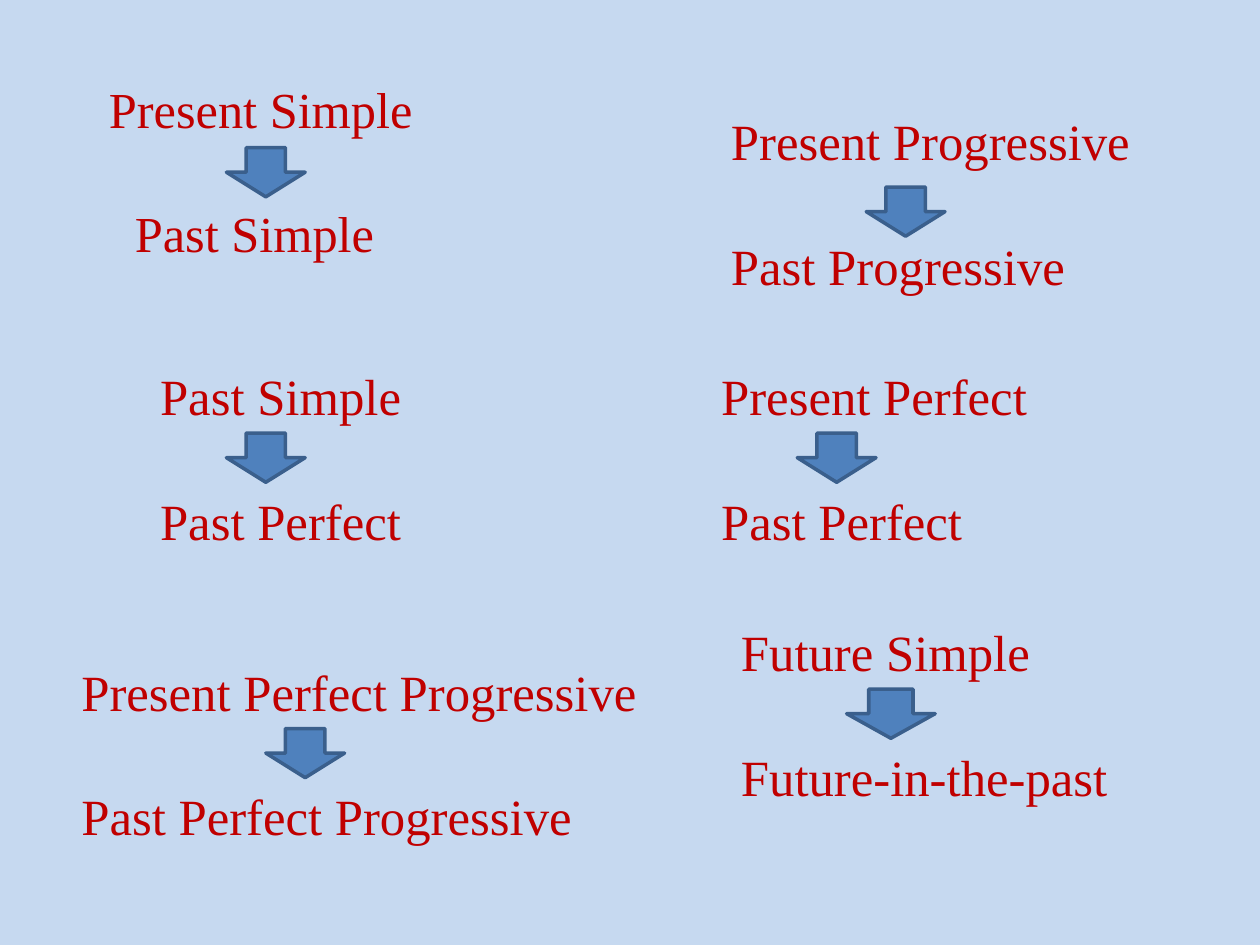
"""Build a slide that pairs each tense with its backshifted form."""
from dataclasses import dataclass

from pptx import Presentation
from pptx.dml.color import RGBColor
from pptx.enum.shapes import MSO_SHAPE
from pptx.enum.text import MSO_ANCHOR, MSO_AUTO_SIZE, PP_ALIGN
from pptx.shapes.base import BaseShape
from pptx.slide import Slide
from pptx.text.text import TextFrame
from pptx.util import Pt

DOWN_ARROW = MSO_SHAPE.DOWN_ARROW
TOP = MSO_ANCHOR.TOP
NO_AUTOFIT = MSO_AUTO_SIZE.NONE
GROW = MSO_AUTO_SIZE.SHAPE_TO_FIT_TEXT
CENTER = PP_ALIGN.CENTER
LEFT = PP_ALIGN.LEFT

BACKGROUND = RGBColor(0xC6, 0xD9, 0xF0)
TEXT_RED = RGBColor(0xC0, 0x00, 0x00)
ARROW_FILL = RGBColor(0x4F, 0x81, 0xBD)
ARROW_LINE = RGBColor(0x3A, 0x5F, 0x8C)
FONT_NAME = "Times New Roman"
PAIR_HEIGHT = 113
PAIR_GAP = 36.4
ARROW_HEIGHT = 28.1


@dataclass(frozen=True)
class TensePair:
    source: str
    result: str
    left: float
    top: float
    width: float


@dataclass(frozen=True)
class Arrow:
    left: float
    top: float
    width: float = 45


TITLE_PAIR = TensePair("Present Simple", "Past Simple ", 0, 44.6, 298.1)
PAIRS = (
    TensePair("Present Progressive", "Past Progressive", 410.6, 56.9, 286.6),
    TensePair("Past Simple", "Past Perfect", 84.4, 202.5, 230.4),
    TensePair("Present Perfect", "Past Perfect", 405, 202.5, 298.1),
    TensePair("Present Perfect Progressive", "Past Perfect Progressive",
              39.4, 371.3, 343.4),
    TensePair("Future Simple", "Future-in-the-past", 416.3, 348.8, 303.8),
)
ARROWS = (
    Arrow(129.4, 84.4),
    Arrow(495, 106.9),
    Arrow(129.4, 247.5),
    Arrow(455.6, 247.5),
    Arrow(151.9, 416.3),
    Arrow(483.8, 393.8, 50.6),
)


def place(shape: BaseShape, pair: TensePair, height: float) -> None:
    shape.left, shape.top = Pt(pair.left), Pt(pair.top)
    shape.width, shape.height = Pt(pair.width), Pt(height)


def write_pair(frame: TextFrame, pair: TensePair, size: float,
               alignment: PP_ALIGN) -> None:
    frame.word_wrap = True
    frame.vertical_anchor = TOP
    for index, text in enumerate((pair.source, pair.result)):
        paragraph = frame.add_paragraph() if index else frame.paragraphs[0]
        paragraph.alignment = alignment
        paragraph.space_before = Pt(PAIR_GAP * index)
        run = paragraph.add_run()
        run.text = text
        run.font.name = FONT_NAME
        run.font.size = Pt(size)
        run.font.color.rgb = TEXT_RED


def fill_title(slide: Slide, pair: TensePair) -> None:
    title = slide.shapes.title
    place(title, pair, 95.8)
    frame = title.text_frame
    frame.auto_size = NO_AUTOFIT
    frame.margin_top = frame.margin_bottom = 0
    write_pair(frame, pair, 28.8, CENTER)


def add_pair(slide: Slide, pair: TensePair) -> None:
    box = slide.shapes.add_textbox(Pt(pair.left), Pt(pair.top),
                                   Pt(pair.width), Pt(PAIR_HEIGHT))
    frame = box.text_frame
    frame.auto_size = GROW
    frame.margin_top = Pt(6)
    write_pair(frame, pair, 29, LEFT)


def add_arrow(slide: Slide, arrow: Arrow) -> None:
    shape = slide.shapes.add_shape(DOWN_ARROW, Pt(arrow.left), Pt(arrow.top),
                                   Pt(arrow.width), Pt(ARROW_HEIGHT))
    shape.shadow.inherit = False
    shape.fill.solid()
    shape.fill.fore_color.rgb = ARROW_FILL
    shape.line.color.rgb = ARROW_LINE
    shape.line.width = Pt(2)


def main() -> None:
    presentation = Presentation()
    presentation.slide_width, presentation.slide_height = Pt(720), Pt(540)
    slide = presentation.slides.add_slide(presentation.slide_layouts[5])
    slide.background.fill.solid()
    slide.background.fill.fore_color.rgb = BACKGROUND
    fill_title(slide, TITLE_PAIR)
    for pair in PAIRS:
        add_pair(slide, pair)
    for arrow in ARROWS:
        add_arrow(slide, arrow)
    presentation.save("out.pptx")


if __name__ == "__main__":
    main()
